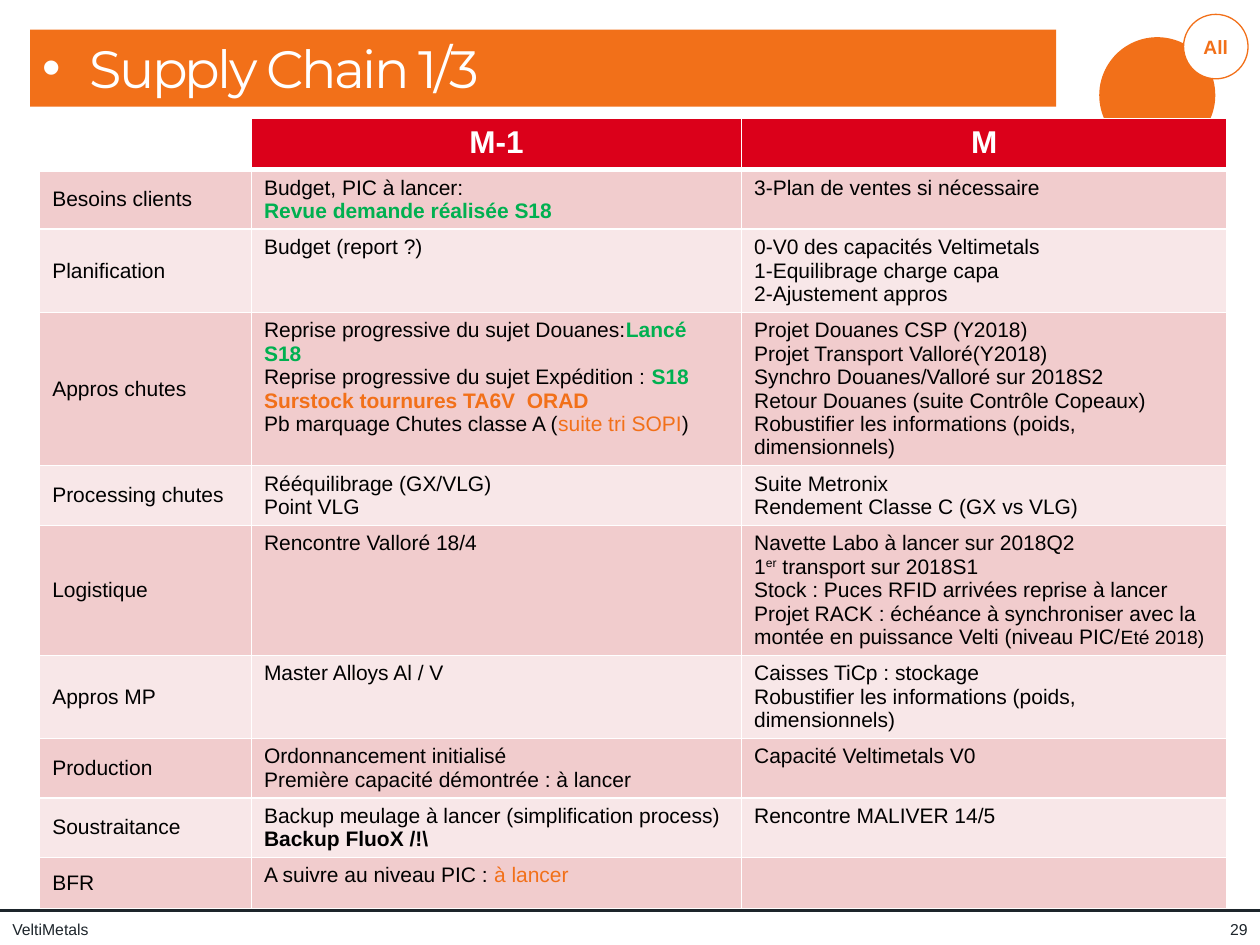
import pptx
import pptx.dml.color
import pptx.enum.shapes
import pptx.enum.text
import pptx.oxml
import pptx.oxml.ns
import pptx.util

Cm = pptx.util.Cm
Pt = pptx.util.Pt
ALIGN = pptx.enum.text.PP_ALIGN
ANCHOR = pptx.enum.text.MSO_ANCHOR
SHAPE = pptx.enum.shapes.MSO_SHAPE
ORANGE, RED, GREEN = "F27019", "DB001A", "00B050"
WHITE, BLACK, INK = "FFFFFF", "000000", "1D252B"
BANDS = ("F1CCCD", "F8E7E8")
DONE = {"color": GREEN, "bold": True}
ALERT = {"color": ORANGE, "bold": True}
PENDING = {"color": ORANGE}

TOPICS = [
    ("Besoins clients",
     ["Budget, PIC à lancer:", [("Revue demande réalisée S18", DONE)]],
     ["3-Plan de ventes si nécessaire"]),
    ("Planification",
     ["Budget (report ?)"],
     ["0-V0 des capacités Veltimetals", "1-Equilibrage charge capa", "2-Ajustement appros"]),
    ("Appros chutes",
     [[("Reprise progressive du sujet Douanes:", {}), ("Lancé S18", DONE)],
      [("Reprise progressive du sujet Expédition : ", {}), ("S18", DONE)],
      [("Surstock tournures TA6V  ORAD", ALERT)],
      [("Pb marquage Chutes classe A (", {}), ("suite tri SOPI", PENDING), (")", {})]],
     ["Projet Douanes CSP (Y2018)", "Projet Transport Valloré(Y2018)",
      "Synchro Douanes/Valloré sur 2018S2", "Retour Douanes (suite Contrôle Copeaux)",
      "Robustifier les informations (poids, dimensionnels)"]),
    ("Processing chutes",
     ["Rééquilibrage (GX/VLG)", "Point VLG"],
     ["Suite Metronix", "Rendement Classe C (GX vs VLG)"]),
    ("Logistique",
     ["Rencontre Valloré 18/4"],
     ["Navette Labo à lancer sur 2018Q2",
      [("1", {}), ("er", {"baseline": 30000}), (" transport sur 2018S1", {})],
      "Stock : Puces RFID arrivées reprise à lancer",
      [("Projet RACK : échéance à synchroniser avec la montée en puissance Velti (niveau PIC/", {}),
       ("Eté 2018)", {"size": 11})]]),
    ("Appros MP",
     ["Master Alloys Al / V"],
     ["Caisses TiCp : stockage", "Robustifier les informations (poids, dimensionnels)"]),
    ("Production",
     ["Ordonnancement initialisé", "Première capacité démontrée : à lancer"],
     ["Capacité Veltimetals V0"]),
    ("Soustraitance",
     ["Backup meulage à lancer (simplification process)", [("Backup FluoX /!\\", {"bold": True})]],
     ["Rencontre MALIVER 14/5"]),
    ("BFR",
     [[("A suivre au niveau PIC : ", {}), ("à lancer", PENDING)]],
     []),
]


def rgb(color):
    """Turn a hex string into a colour."""
    return pptx.dml.color.RGBColor.from_string(color)


def set_all(target, values):
    """Set each attribute named in a dict."""
    for name, value in values.items():
        setattr(target, name, value)


def add_run(paragraph, text, size=12, color=BLACK, bold=False, name="Arial", **extras):
    """Append a formatted run; extras become run property attributes."""
    run = paragraph.add_run()
    run.text = text
    set_all(run.font, {"size": Pt(size), "bold": bold, "name": name})
    run.font.color.rgb = rgb(color)
    for key, value in extras.items():
        run.font._element.set(key, str(value))


def write(frame, lines, align=ALIGN.LEFT, spacing=None, **style):
    """Fill a text frame with one paragraph per line."""
    for index, line in enumerate(lines):
        paragraph = frame.paragraphs[0] if index == 0 else frame.add_paragraph()
        set_all(paragraph, {"alignment": align, "line_spacing": spacing})
        for text, changes in [(line, {})] if isinstance(line, str) else line:
            add_run(paragraph, text, **{**style, **changes})


def add_filled(slide, preset, box, fill, outline=None):
    """Add a flat preset shape."""
    shape = slide.shapes.add_shape(preset, *map(Cm, box))
    shape.shadow.inherit = False
    shape.fill.solid()
    shape.fill.fore_color.rgb = rgb(fill)
    if outline:
        shape.line.color.rgb = rgb(outline)
        shape.line.width = Pt(0.75)
    else:
        shape.line.fill.background()
    return shape


def add_title(slide, box, title):
    """Add the title banner with its bullet."""
    frame = add_filled(slide, SHAPE.RECTANGLE, box, ORANGE).text_frame
    set_all(frame, {"word_wrap": True, "vertical_anchor": ANCHOR.TOP})
    properties = frame.paragraphs[0]._p.get_or_add_pPr()
    properties.set("marL", str(Cm(0.95)))
    properties.set("indent", str(-Cm(0.95)))
    ns = pptx.oxml.ns.nsdecls("a")
    for bullet in ('<a:buClr %s><a:srgbClr val="FFFFFF"/></a:buClr>',
                   '<a:buFont %s typeface="Arial"/>', '<a:buChar %s char="•"/>'):
        properties.append(pptx.oxml.parse_xml(bullet % ns))
    write(frame, [title], size=30, color=WHITE, name="Montserrat", spc=-150)


def add_badge(slide, box, label):
    """Add the disc and the labelled ring at its upper right."""
    left, top, width, height = box
    disc, ring = 2.34, 1.3
    add_filled(slide, SHAPE.OVAL, (left, top + height - disc, disc, disc), ORANGE)
    frame = add_filled(slide, SHAPE.OVAL, (left + width - ring, top, ring, ring),
                       WHITE, ORANGE).text_frame
    set_all(frame, {"margin_left": 0, "margin_right": 0, "vertical_anchor": ANCHOR.MIDDLE})
    write(frame, [label], ALIGN.CENTER, size=11, color=ORANGE, bold=True)


def add_footer(slide, box, company, number):
    """Add the rule, the company and the page number."""
    left, top, width, height = box
    rule = slide.shapes.add_connector(pptx.enum.shapes.MSO_CONNECTOR.STRAIGHT,
                                      Cm(left), Cm(top), Cm(left + width), Cm(top))
    rule.line.color.rgb = rgb(INK)
    rule.line.width = Pt(1.5)
    rule._element.spPr.append(
        pptx.oxml.parse_xml("<a:effectLst %s/>" % pptx.oxml.ns.nsdecls("a")))
    gap, page_width = 0.06, 1.24
    for x, span, text, align in ((left, 8.74, company, ALIGN.LEFT),
                                 (left + width - page_width, page_width, number, ALIGN.RIGHT)):
        frame = slide.shapes.add_textbox(Cm(x), Cm(top + gap), Cm(span), Cm(height - gap)).text_frame
        set_all(frame, {"word_wrap": True, "vertical_anchor": ANCHOR.MIDDLE})
        write(frame, [text], align, size=9, color=INK)


def paint_cell(cell, fill, top=1, bottom=1):
    """Give a cell white borders and a plain fill."""
    properties = cell._tc.get_or_add_tcPr()
    for side, width in (("L", 1), ("R", 1), ("T", top), ("B", bottom)):
        properties.append(pptx.oxml.parse_xml(
            '<a:ln%s %s w="%d"><a:solidFill><a:srgbClr val="%s"/></a:solidFill></a:ln%s>'
            % (side, pptx.oxml.ns.nsdecls("a"), Pt(width), WHITE, side)))
    cell.fill.solid()
    cell.fill.fore_color.rgb = rgb(fill)


def add_topics(slide, box, periods, topics):
    """Add the table of topics by period."""
    table = slide.shapes.add_table(len(topics) + 1, 3, *map(Cm, box)).table
    for column, width in zip(table.columns, (4.27, 9.88, 9.78)):
        column.width = Cm(width)
    for column, period in enumerate(("", *periods)):
        cell = table.cell(0, column)
        paint_cell(cell, RED if period else WHITE, bottom=3)
        if period:
            write(cell.text_frame, [period], ALIGN.CENTER, size=18, color=WHITE, bold=True)
    for row, (topic, *notes) in enumerate(topics, 1):
        for column, lines in enumerate(([topic], *notes)):
            cell = table.cell(row, column)
            paint_cell(cell, BANDS[(row - 1) % 2], top=3 if row == 1 else 1)
            cell.vertical_anchor = ANCHOR.TOP if column else ANCHOR.MIDDLE
            write(cell.text_frame, lines, spacing=Pt(13.4))


def main():
    """Build and save the slide."""
    deck = pptx.Presentation()
    set_all(deck, {"slide_width": Cm(25.4), "slide_height": Cm(19.05)})
    slide = deck.slides.add_slide(deck.slide_layouts[6])
    add_badge(slide, (22.16, 0.29, 3, 2.8), "All")
    add_footer(slide, (0, 18.36, 25.4, 0.69), "VeltiMetals", "29")
    add_title(slide, (0.61, 0.6, 20.68, 1.55), "Supply Chain 1/3")
    add_topics(slide, (0.8, 2.39, 23.93, 10.3), ("M-1", "M"), TOPICS)
    deck.save("out.pptx")


if __name__ == "__main__":
    main()
